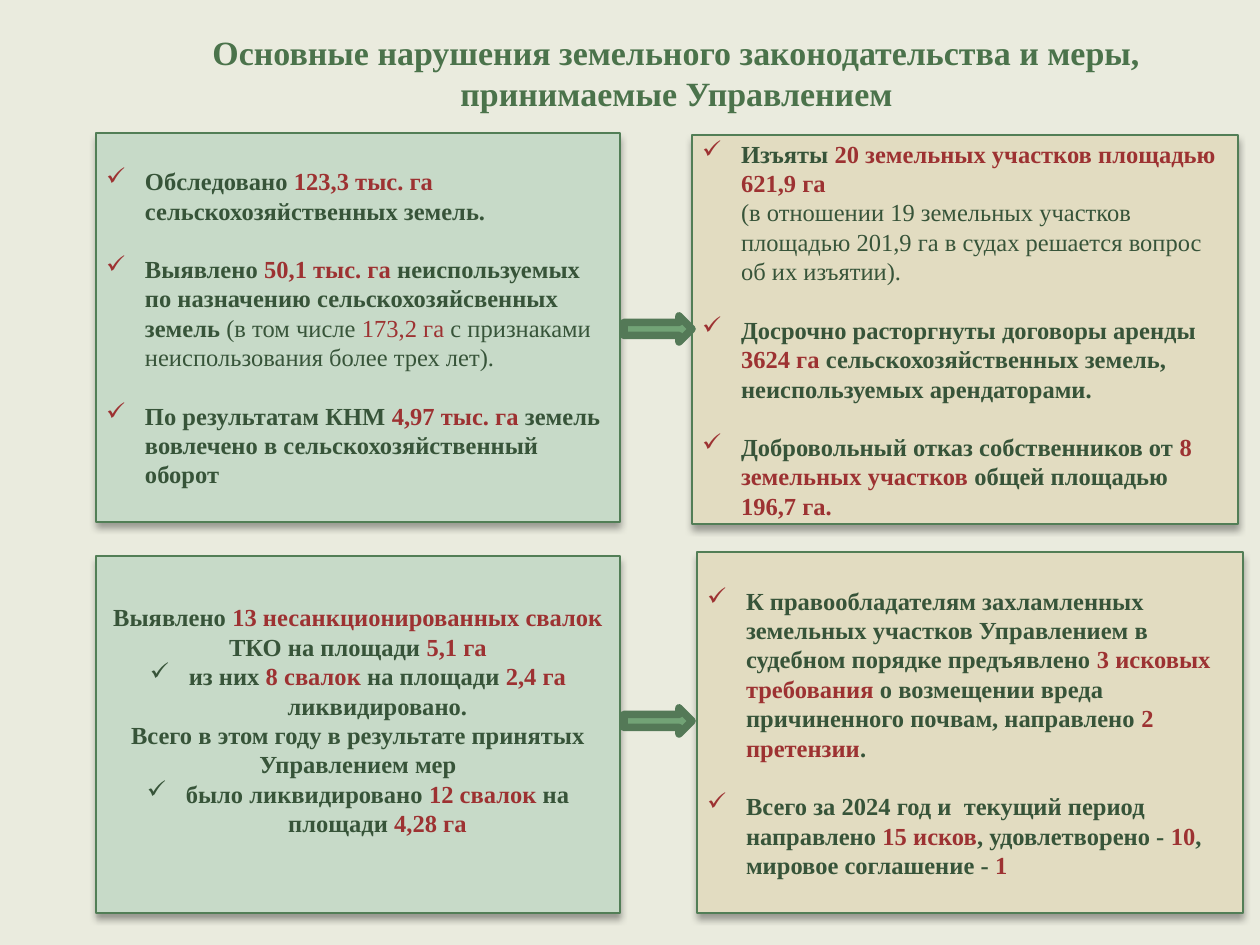
from lxml import etree
from pptx import Presentation
from pptx.dml.color import RGBColor
from pptx.enum.shapes import MSO_SHAPE
from pptx.enum.text import MSO_ANCHOR, PP_ALIGN
from pptx.oxml.ns import qn
from pptx.util import Emu, Pt

RECTANGLE = MSO_SHAPE.RECTANGLE
RIGHT_ARROW = MSO_SHAPE.RIGHT_ARROW
MIDDLE = MSO_ANCHOR.MIDDLE
TOP = MSO_ANCHOR.TOP
CENTER = PP_ALIGN.CENTER
LEFT = PP_ALIGN.LEFT

SCALE = 914400 / 126
FONT = "Times New Roman"
INDENT = 39
LINE_HEIGHT = 29
COLORS = {
    "page": "EAEBDE",
    "title": "4B734B",
    "text": "375439",
    "accent": "9D3232",
    "findings": "C7DAC8",
    "measures": "E2DCC1",
    "border": "527E56",
    "arrow": "72A376",
    "arrow_edge": "547957",
    "shadow": "000000",
}

SURVEY = [
    "Обследовано |123,3 тыс. га |сельскохозяйственных земель.",
    "Выявлено |50,1 тыс. га |неиспользуемых \nпо назначению сельскохозяйсвенных земель "
    "~(в том числе |173,2 га |с признаками неиспользования более трех лет).",
    "По результатам КНМ |4,97 тыс. га| земель вовлечено в сельскохозяйственный оборот",
]
SEIZURES = [
    "Изъяты |20 земельных участков площадью 621,9 га \n|"
    "~(в отношении 19 земельных участков площадью 201,9 га в судах решается вопрос об их изъятии).",
    "Досрочно расторгнуты договоры аренды |3624 га| сельскохозяйственных земель, "
    "неиспользуемых арендаторами.",
    "Добровольный отказ собственников от |8 земельных участков| общей площадью |196,7 га.",
]
DUMPS = [
    "Выявлено |13 несанкционированных свалок| ТКО на площади |5,1 га",
    "✓из них |8 свалок| на площади |2,4 га| ликвидировано.",
    "Всего в этом году в результате принятых Управлением мер",
    "✓было ликвидировано |12 свалок| на площади |4,28 га",
]
CLAIMS = [
    "К правообладателям захламленных земельных участков Управлением в судебном порядке "
    "предъявлено |3 исковых требования| о возмещении вреда причиненного почвам, "
    "направлено |2 претензии|.",
    "Всего за 2024 год и  текущий период направлено |15 исков|, удовлетворено - |10|, "
    "мировое соглашение - |1",
]


def px(length):
    return Emu(round(length * SCALE))


def color(name):
    return RGBColor.from_string(COLORS[name])


def style_font(font, size, name, bold=True):
    font.name = FONT
    font.size = Pt(size)
    font.bold = bold
    font.color.rgb = color(name)


def set_frame(frame, anchor, bottom=5):
    frame.word_wrap = True
    frame.vertical_anchor = anchor
    frame.margin_left = frame.margin_right = px(10)
    frame.margin_top = px(5)
    frame.margin_bottom = px(bottom)


def add_bullet(para, color_name):
    properties = para._p.get_or_add_pPr()
    properties.set("marL", str(px(INDENT)))
    properties.set("indent", str(-px(INDENT)))
    bullet_color = etree.SubElement(properties, qn("a:buClr"))
    etree.SubElement(bullet_color, qn("a:srgbClr"), val=COLORS[color_name])
    etree.SubElement(properties, qn("a:buChar"), char="✓")


def add_span(para, text, color_name, bold):
    lines = text.split("\n")
    for number, line in enumerate(lines):
        if number:
            para.add_line_break()
        if line:
            span = para.add_run()
            span.text = line
            style_font(span.font, 14, color_name, bold)


def fill_paragraph(para, markup):
    bold = True
    for number, part in enumerate(markup.split("|")):
        for position, text in enumerate(part.split("~")):
            bold = bold and position == 0
            add_span(para, text, "accent" if number % 2 else "text", bold)


def add_shadow(box):
    box.shadow.inherit = False
    effects = box._element.spPr.find(qn("a:effectLst"))
    shadow = etree.SubElement(effects, qn("a:outerShdw"), blurRad=str(Pt(4)),
                              dist=str(Pt(3)), dir="5400000", rotWithShape="0")
    tint = etree.SubElement(shadow, qn("a:srgbClr"), val=COLORS["shadow"])
    etree.SubElement(tint, qn("a:alpha"), val="35000")


def add_panel(page, place, fill, bottom=5):
    box = page.shapes.add_shape(RECTANGLE, *map(px, place))
    box.fill.solid()
    box.fill.fore_color.rgb = color(fill)
    box.line.color.rgb = color("border")
    box.line.width = Pt(0.75)
    add_shadow(box)
    set_frame(box.text_frame, MIDDLE, bottom)
    return box.text_frame


def add_paragraphs(frame, count):
    return [frame.paragraphs[0]] + [frame.add_paragraph() for _ in range(count - 1)]


def add_checklist(page, place, fill, items):
    frame = add_panel(page, place, fill)
    for number, para in enumerate(add_paragraphs(frame, len(items))):
        add_bullet(para, "accent")
        para.alignment = LEFT
        if number:
            para.space_before = px(LINE_HEIGHT)
        fill_paragraph(para, items[number])


def add_centered_list(page, place, fill, items):
    frame = add_panel(page, place, fill, 5 + LINE_HEIGHT)
    for para, item in zip(add_paragraphs(frame, len(items)), items):
        if item.startswith("✓"):
            add_bullet(para, "text")
        para.alignment = CENTER
        fill_paragraph(para, item.lstrip("✓"))


def add_title(page, place):
    frame = page.shapes.add_textbox(*map(px, place)).text_frame
    set_frame(frame, TOP)
    frame.text = "Основные нарушения земельного законодательства и меры, принимаемые Управлением"
    para = frame.paragraphs[0]
    para.alignment = CENTER
    style_font(para.runs[0].font, 19.4, "title")


def add_arrow(page, place):
    arrow = page.shapes.add_shape(RIGHT_ARROW, *map(px, place))
    arrow.shadow.inherit = False
    arrow.fill.solid()
    arrow.fill.fore_color.rgb = color("arrow")
    arrow.line.color.rgb = color("arrow_edge")
    arrow.line.width = Pt(4.33)
    etree.SubElement(arrow._element.spPr.find(qn("a:ln")), qn("a:round"))


def main():
    deck = Presentation()
    deck.slide_width, deck.slide_height = px(1260), px(945)
    page = deck.slides.add_slide(deck.slide_layouts[6])
    page.background.fill.solid()
    page.background.fill.fore_color.rgb = color("page")
    add_title(page, (110, 27, 1134, 89))
    add_checklist(page, (96, 133, 524, 389), "findings", SURVEY)
    add_checklist(page, (692, 135, 546, 389), "measures", SEIZURES)
    add_centered_list(page, (96, 556, 524, 357), "findings", DUMPS)
    add_checklist(page, (697, 552, 546, 361), "measures", CLAIMS)
    for top in (316, 708):
        add_arrow(page, (624, top, 68, 26))
    deck.save("out.pptx")


if __name__ == "__main__":
    main()
